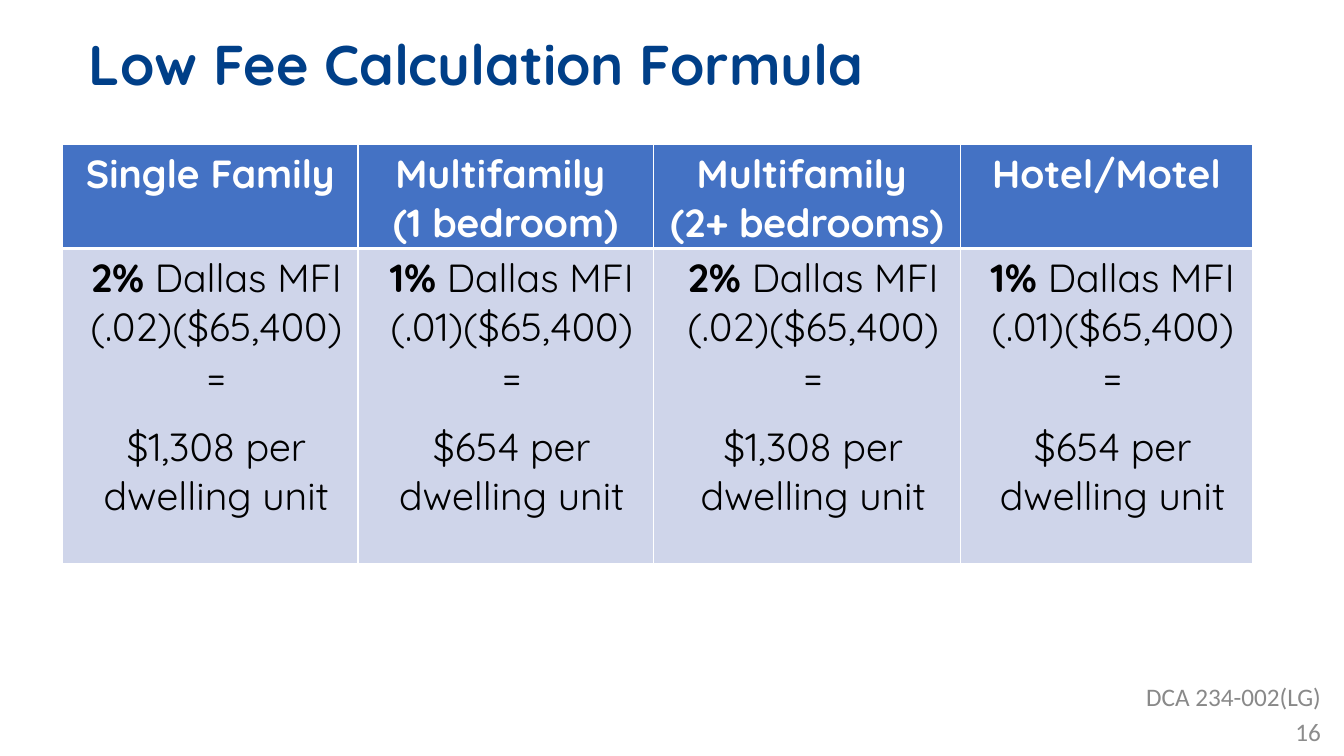
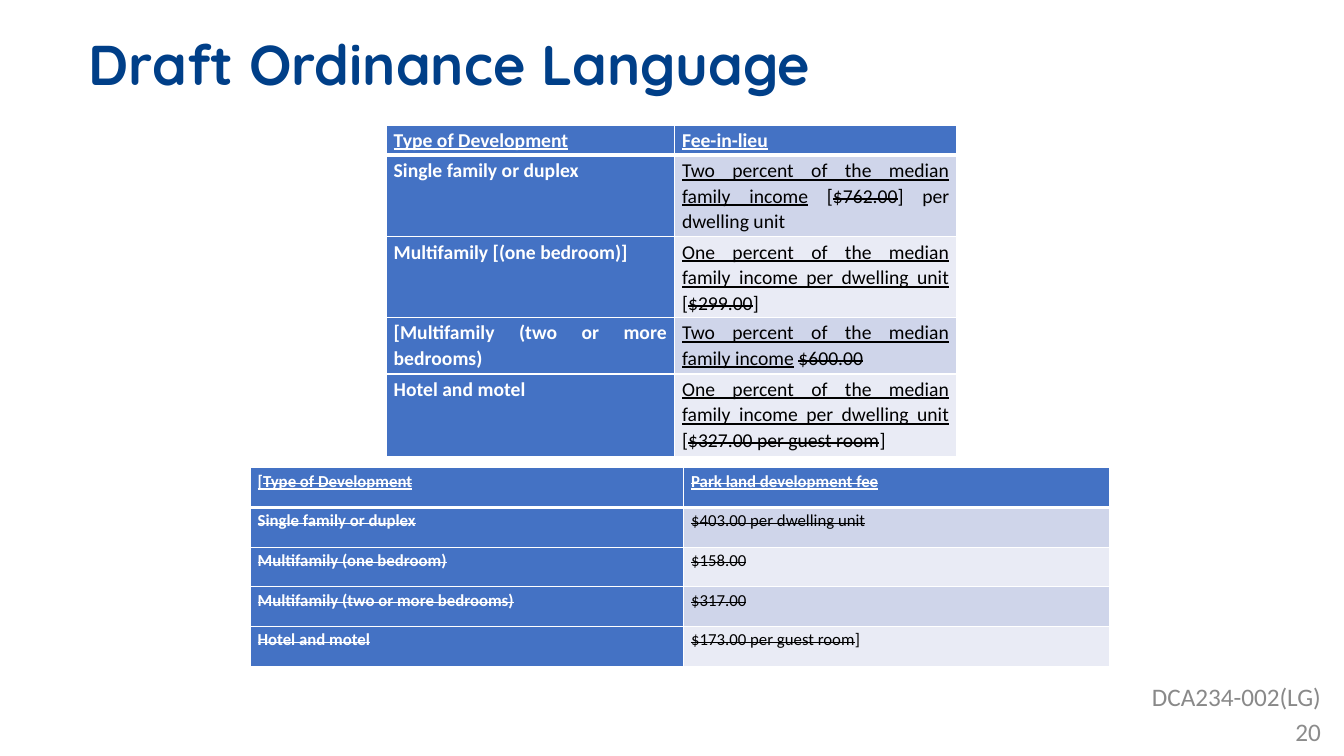
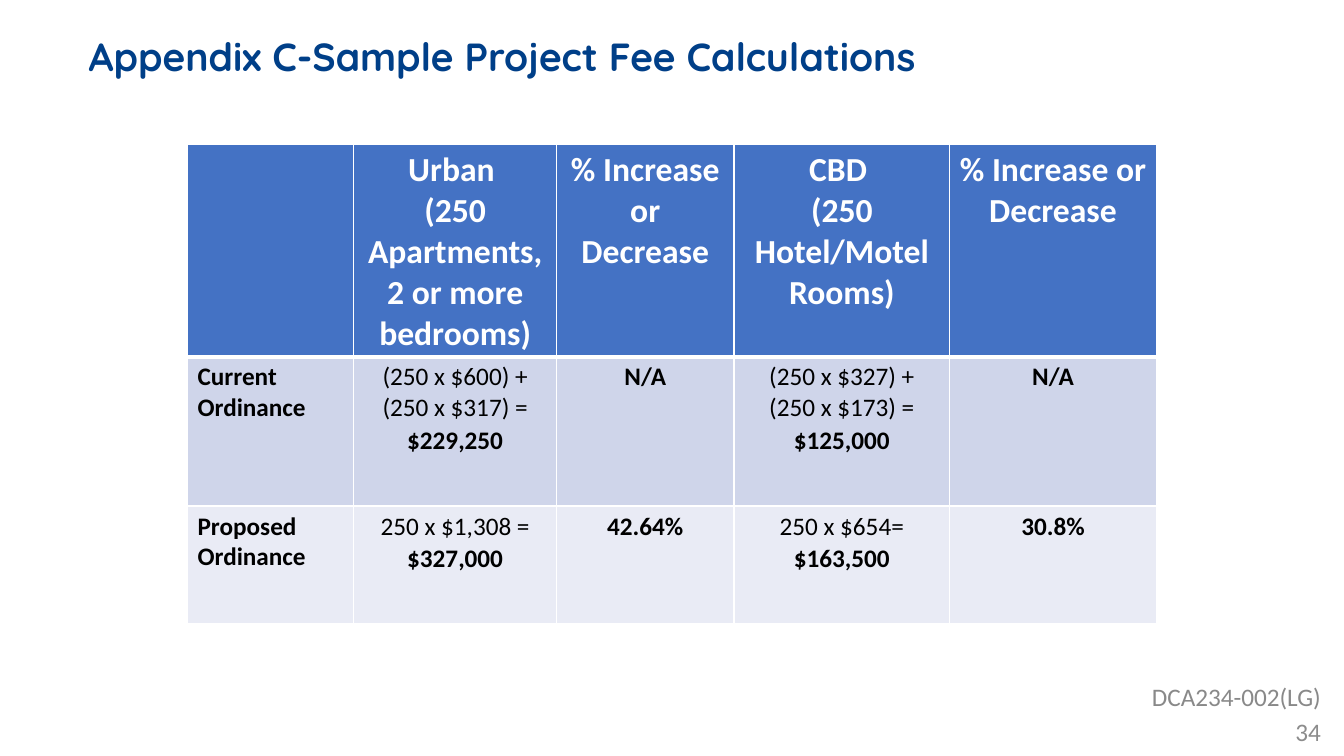
from pptx import Presentation
from pptx.dml.color import RGBColor
from pptx.enum.text import MSO_ANCHOR, PP_ALIGN
from pptx.oxml import parse_xml
from pptx.oxml.ns import nsdecls
from pptx.util import Inches, Pt

NAVY = RGBColor(0x00, 0x3F, 0x88)
BLUE = RGBColor(0x44, 0x72, 0xC4)
BAND_DARK = RGBColor(0xCF, 0xD5, 0xEA)
BAND_LIGHT = RGBColor(0xE9, 0xEB, 0xF5)
GRAY = RGBColor(0x89, 0x89, 0x89)
NUMBER_GRAY = RGBColor(0x8C, 0x8C, 0x8C)
WHITE = RGBColor(0xFF, 0xFF, 0xFF)
BLACK = RGBColor(0x00, 0x00, 0x00)

HEADING, BODY = "Quicksand", "Calibri"
W, H = 13.33, 7.5
FOOT_RIGHT = W - 0.13
TITLE_ONLY = 5


def style_font(font, name, size, color, bold=False):
    font.name, font.size, font.bold = name, Pt(size), bold
    font.color.rgb = color


def add_footer(s, text, top, width, color, anchor):
    box = s.shapes.add_textbox(Inches(FOOT_RIGHT - width), Inches(top),
                               Inches(width), Inches(0.4))
    tf = box.text_frame
    tf.word_wrap = True
    tf.vertical_anchor = anchor
    tf.text = text
    p = tf.paragraphs[0]
    p.alignment = PP_ALIGN.RIGHT
    style_font(p.runs[0].font, BODY, 18, color)


def add_slide(prs, title, number, code, size=40):
    s = prs.slides.add_slide(prs.slide_layouts[TITLE_ONLY])
    ph = s.shapes.title
    ph.left, ph.top = Inches(0.78), Inches(0.32)
    ph.width, ph.height = Inches(9.26), Inches(0.77)
    tf = ph.text_frame
    tf.word_wrap = True
    tf.vertical_anchor = MSO_ANCHOR.TOP
    tf.text = title
    p = tf.paragraphs[0]
    p.alignment, p.line_spacing = PP_ALIGN.LEFT, 0.9
    style_font(p.runs[0].font, HEADING, size, NAVY, True)
    add_footer(s, code, 6.71, 2.19, GRAY, MSO_ANCHOR.TOP)
    add_footer(s, str(number), 7.06, 3, NUMBER_GRAY, MSO_ANCHOR.MIDDLE)
    return s


def set_borders(cell, is_header):
    tcPr = cell._tc.get_or_add_tcPr()
    for side in "LRTB":
        width = Pt(3 if is_header and side == "B" else 1)
        tcPr.append(parse_xml(
            f'<a:ln{side} {nsdecls("a")} w="{width}"><a:solidFill>'
            f'<a:srgbClr val="{WHITE}"/></a:solidFill></a:ln{side}>'))


def fill_text(tf, paragraphs, font, size, color, bold, align, spacing=None, gap=0, indent=0):
    """Each paragraph is a string or (text, marks) runs; marks are b, u and s."""
    for i, content in enumerate(paragraphs):
        p = tf.add_paragraph() if i else tf.paragraphs[0]
        p.alignment = align
        if spacing:
            p.line_spacing = spacing
        if i and gap:
            p.space_before = Pt(gap)
        if indent:
            p._p.get_or_add_pPr().set("marL", str(Inches(indent)))
        for text, marks in [(content, "")] if isinstance(content, str) else content:
            r = p.add_run()
            r.text = text
            style_font(r.font, font, size, color, bold or "b" in marks)
            if "u" in marks:
                r.font.underline = True
            if "s" in marks:
                r._r.get_or_add_rPr().set("strike", "sngStrike")


def add_grid(s, left, top, cols, heights, rows, font, sizes, align=PP_ALIGN.CENTER,
             header_col=False, left_col=False, inset=None, indent=0, gap=0, spacing=None):
    frame = s.shapes.add_table(len(rows), len(cols), Inches(left), Inches(top),
                               Inches(sum(cols)), Inches(sum(heights)))
    table = frame.table
    for column, width in zip(table.columns, cols):
        column.width = Inches(width)
    for i, (row, height) in enumerate(zip(rows, heights)):
        table.rows[i].height = Inches(height)
        for j, paragraphs in enumerate(row):
            cell = table.cell(i, j)
            is_blue = i == 0 or (header_col and j == 0)
            set_borders(cell, i == 0)
            cell.fill.solid()
            cell.fill.fore_color.rgb = BLUE if is_blue else BAND_DARK if i % 2 else BAND_LIGHT
            if inset:
                cell.margin_left = cell.margin_right = Pt(inset[0])
                cell.margin_top = cell.margin_bottom = Pt(inset[1])
            fill_text(cell.text_frame, paragraphs, font, sizes[min(i, 1)],
                      WHITE if is_blue else BLACK, is_blue,
                      PP_ALIGN.LEFT if left_col and j == 0 else align, spacing,
                      gap if i else 0, indent if i else 0)


def low_fee(percent, rate, fee):
    return [[(f"{percent}% ", "b"), (f"Dallas MFI ({rate})($65,400) =", "")],
            f"{fee} per dwelling unit"]


def total(formula, amount):
    return [formula, [(amount, "b")]]


def bold(text):
    return [[(text, "b")]]


def struck(text):
    return [[(text, "s")]]


def change(new, old, before=" [", after="]"):
    return [[(new, "u"), (before, ""), (old, "s"), (after, "")]]


def formula_slide(prs):
    s = add_slide(prs, "Low Fee Calculation Formula", 16, "DCA 234-002(LG)")
    two, one = low_fee(2, ".02", "$1,308"), low_fee(1, ".01", "$654")
    rows = [[["Single Family"], ["Multifamily ", "(1 bedroom)"],
             ["Multifamily ", "(2+ bedrooms)"], ["Hotel/Motel"]],
            [two, one, two, one]]
    add_grid(s, 0.62, 1.43, [2.93, 2.93, 3.05, 2.89], [1.03, 3.13], rows,
             HEADING, (28, 28), gap=16.1, indent=0.12)


def ordinance_slide(prs):
    s = add_slide(prs, "Draft Ordinance Language", 20, "DCA234-002(LG)")
    two = "Two percent of the median family income"
    one = "One percent of the median family income per dwelling unit"
    layout = dict(font=BODY, align=PP_ALIGN.JUSTIFY, header_col=True,
                  inset=(5.4, 1.4), spacing=1.07)
    lieu = [
        [[[("Type of Development", "u")]], [[("Fee-in-lieu", "u")]]],
        [["Single family or duplex"],
         change(two, "$762.00", after="] per dwelling unit")],
        [["Multifamily [(one bedroom)]"], change(one, "$299.00")],
        [["[Multifamily (two or more bedrooms)"],
         [[(two, "u"), (" ", ""), ("$600.00", "s")]]],
        [["Hotel and motel"], change(one, "$327.00 per guest room")],
    ]
    add_grid(s, 3.83, 1.24, [2.86, 2.8], [0.3, 0.81, 0.8, 0.56, 0.82], lieu,
             sizes=(14, 14), **layout)
    park = [
        [[[("[", "u"), ("Type of Development", "us")]],
         [[("Park land development fee", "us")]]],
        [struck("Single family or duplex"), struck("$403.00 per dwelling unit")],
        [struck("Multifamily (one bedroom)"), struck("$158.00")],
        [struck("Multifamily (two or more bedrooms)"), struck("$317.00")],
        [struck("Hotel and motel"), [[("$173.00 per guest room", "s"), ("]", "")]]],
    ]
    add_grid(s, 2.48, 4.64, [4.3, 4.23], [1.97 / 5] * 5, park, sizes=(12, 12), **layout)


def appendix_slide(prs):
    s = add_slide(prs, "Appendix C-Sample Project Fee Calculations", 34,
                  "DCA234-002(LG)", 28)
    rows = [
        [[], ["Urban ", "(250 Apartments, 2 or more bedrooms)"],
         ["% Increase or Decrease"], ["CBD ", "(250 Hotel/Motel Rooms)"],
         ["% Increase or Decrease"]],
        [bold("Current Ordinance"), total("(250 x $600) + (250 x $317) =", "$229,250"),
         bold("N/A"), total("(250 x $327) + (250 x $173) =", "$125,000"), bold("N/A")],
        [bold("Proposed Ordinance"), total("250 x $1,308 =", "$327,000"),
         bold("42.64%"), total("250 x $654=", "$163,500"), bold("30.8%")],
    ]
    add_grid(s, 1.86, 1.43, [1.65, 2.01, 1.76, 2.14, 2.05], [2.11, 1.48, 1.17], rows,
             BODY, (24, 18), left_col=True, gap=1.3)


def main():
    prs = Presentation()
    prs.slide_width, prs.slide_height = Inches(W), Inches(H)
    formula_slide(prs)
    ordinance_slide(prs)
    appendix_slide(prs)
    prs.save("out.pptx")


if __name__ == "__main__":
    main()
